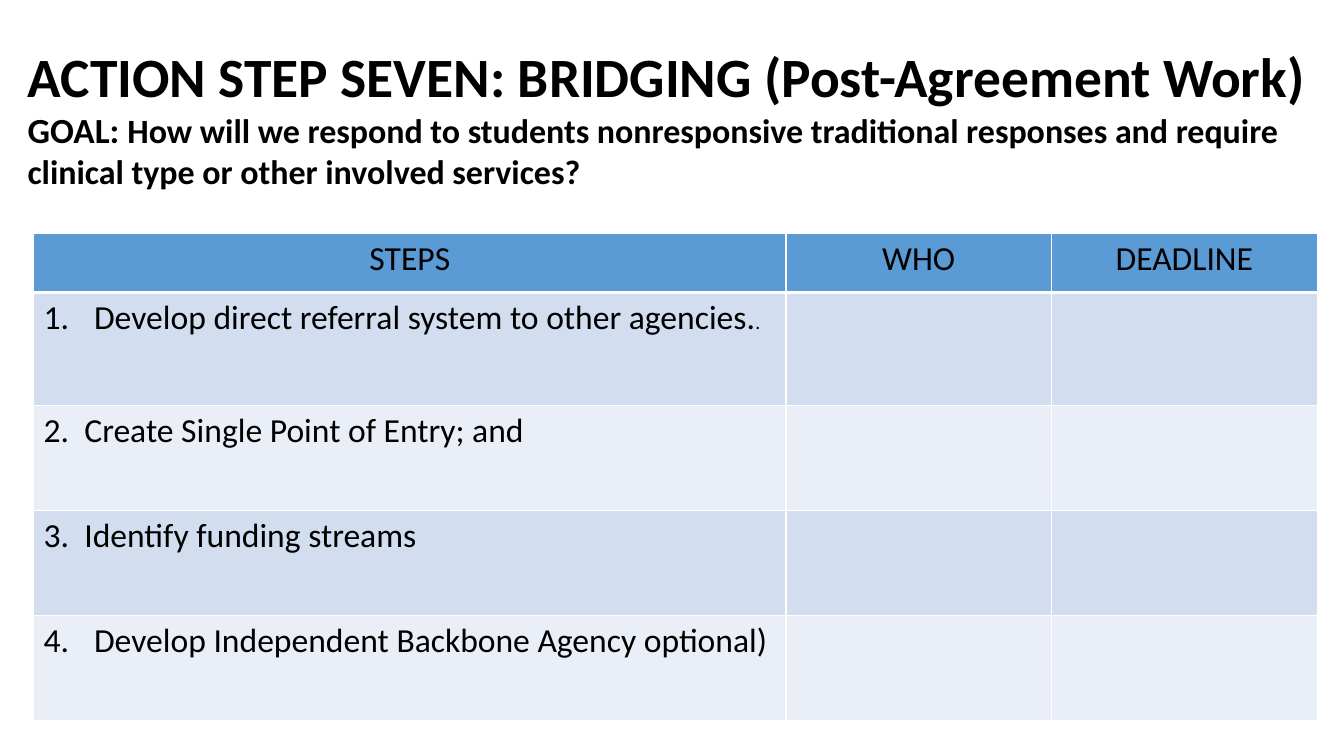
"""Build the slide on action step seven with its table of steps."""
import pptx
import pptx.dml.color
import pptx.enum.text
import pptx.oxml
import pptx.oxml.ns
import pptx.util

Pt = pptx.util.Pt
ALIGN = pptx.enum.text.PP_ALIGN
NS = pptx.oxml.ns.nsdecls("a")


def hue(code):
    """Turn a hex string into a colour."""
    return pptx.dml.color.RGBColor.from_string(code)


def write(para, text, size=24, bold=False, color="000000", align=ALIGN.LEFT):
    """Add a formatted run to a paragraph."""
    para.alignment = align
    run = para.add_run()
    run.text = text
    run.font.name = "Calibri"
    run.font.size = Pt(size)
    run.font.bold = bold
    run.font.color.rgb = hue(color)


deck = pptx.Presentation()
deck.slide_width, deck.slide_height = Pt(960), Pt(540)
slide = deck.slides.add_slide(deck.slide_layouts[5])

title = slide.shapes.title
title.left, title.top, title.width, title.height = Pt(12.5), Pt(0), Pt(928), Pt(167)
frame = title.text_frame
frame.word_wrap = True
frame.auto_size = pptx.enum.text.MSO_AUTO_SIZE.NONE
frame.vertical_anchor = pptx.enum.text.MSO_ANCHOR.MIDDLE
head = frame.paragraphs[0]
write(head, "ACTION STEP SEVEN: BRIDGING (Post-Agreement Work)", size=39.6, bold=True)
head.add_line_break()
write(head, "GOAL: ", size=25.2, bold=True)
write(head, "How will we respond to students nonresponsive traditional responses "
      "and require clinical type or other involved services?", size=24.3, bold=True)

widths = [537.5, 189.5, 190]
heights = [42, 80.5, 75, 75, 75]
table = slide.shapes.add_table(
    len(heights), len(widths), Pt(24), Pt(167), Pt(sum(widths)), Pt(sum(heights))).table
for col, width in zip(table.columns, widths):
    col.width = Pt(width)
for row, height in zip(table.rows, heights):
    row.height = Pt(height)

fills = ["5B9BD5"] + ["D2DEEF", "EAEFF7"] * 2
for row, fill in zip(table.rows, fills):
    for cell in row.cells:
        props = cell._tc.get_or_add_tcPr()
        for side in "LRTB":
            thick = 3 if side == "B" and fill == fills[0] else 1
            props.append(pptx.oxml.parse_xml(
                f'<a:ln{side} {NS} w="{Pt(thick)}"><a:solidFill>'
                f'<a:srgbClr val="FFFFFF"/></a:solidFill></a:ln{side}>'))
        cell.fill.solid()
        cell.fill.fore_color.rgb = hue(fill)

for cell, label in zip(table.rows[0].cells, ["STEPS", "WHO", "DEADLINE"]):
    write(cell.text_frame.paragraphs[0], label, align=ALIGN.CENTER)

steps = [
    ("Develop direct referral system to other agencies.", 1),
    ("2.  Create Single Point of Entry; and", None),
    ("3.  Identify funding streams", None),
    ("Develop Independent Backbone Agency optional)", 4),
]
for place, (step, start) in enumerate(steps, 1):
    para = table.cell(place, 0).text_frame.paragraphs[0]
    write(para, step)
    if start:
        props = para._p.get_or_add_pPr()
        props.set("marL", str(Pt(36)))
        props.set("indent", str(-Pt(36)))
        props.append(pptx.oxml.parse_xml(
            f'<a:buAutoNum {NS} type="arabicPeriod" startAt="{start}"/>'))
write(table.cell(1, 0).text_frame.paragraphs[0], ".", size=14)

deck.save("out.pptx")
